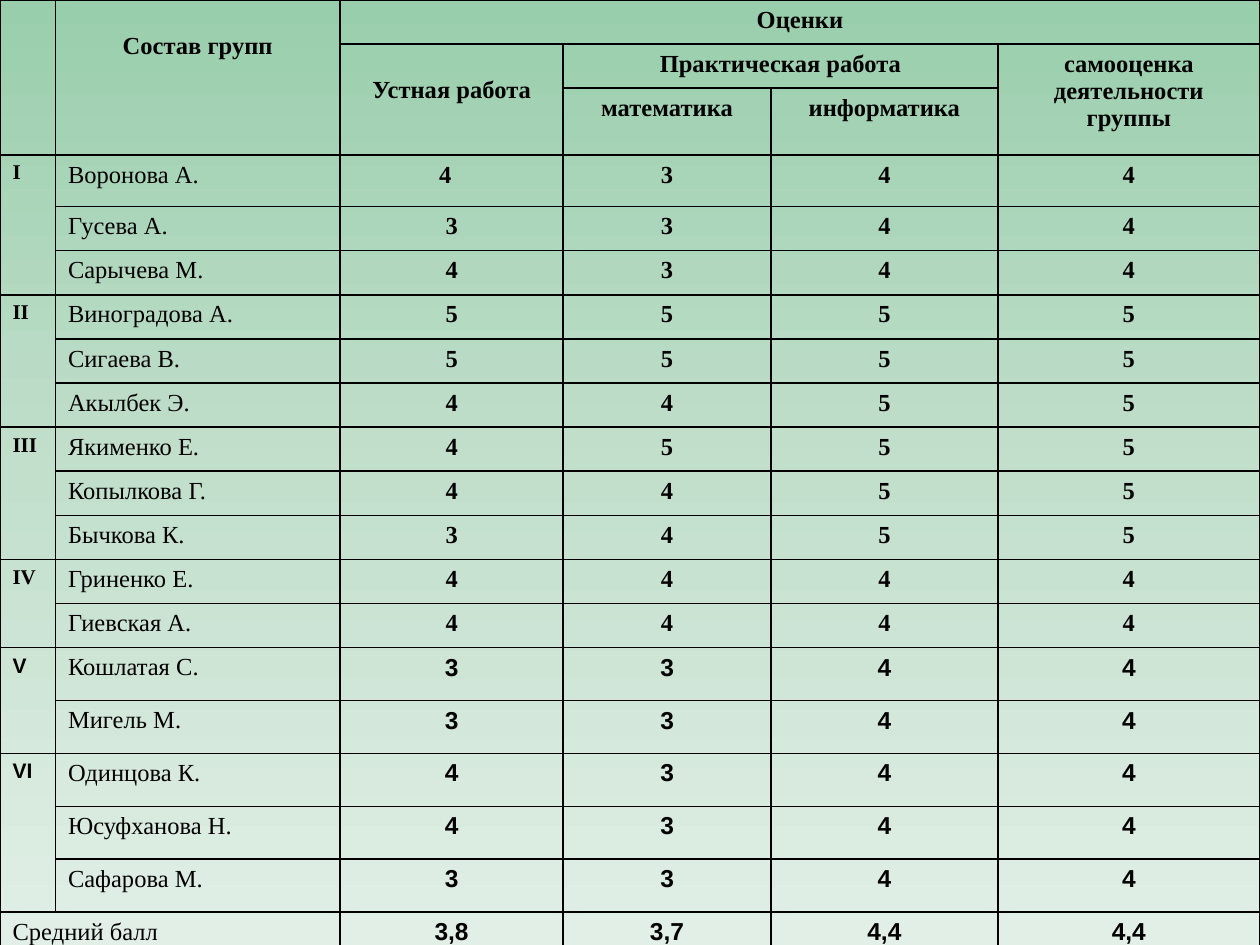
from copy import deepcopy

from pptx import Presentation
from pptx.dml.color import RGBColor
from pptx.enum.text import PP_ALIGN as Align
from pptx.oxml import parse_xml
from pptx.oxml.ns import nsdecls
from pptx.util import Inches, Pt

COLORS = {"top": "99CEAC", "middle": "C2DFCC", "bottom": "E1EFE6", "ink": "000000"}
SERIF, SANS = "Times New Roman", "Arial"

COL_WIDTHS = [0.44, 2.26, 1.77, 1.65, 1.8, 2.08]
ROW_HEIGHTS = [0.35, 0.35, 0.53, 0.41] + [0.35] * 10 + [0.42] * 5 + [0.35]
FIRST_ROW = 3
LINE = 0.21  # one line of header text, in inches

# Header: row, column, rows spanned, columns spanned, text, lines to drop
HEADERS = [
    (0, 0, 3, 1, "", 0),
    (0, 1, 3, 1, "Состав групп", 1),
    (0, 2, 1, 4, "Оценки", 0),
    (1, 2, 2, 1, "Устная работа", 1),
    (1, 3, 1, 2, "Практическая работа", 0),
    (1, 5, 2, 1, "самооценка\nдеятельности группы", 0),
    (2, 3, 1, 1, "математика", 0),
    (2, 4, 1, 1, "информатика", 0),
]

# Groups: number, font of the marks, members with their marks
GROUPS = [
    ("I", SERIF, [("Воронова А.", "4344"), ("Гусева А.", "3344"), ("Сарычева М.", "4344")]),
    ("II", SERIF, [("Виноградова А.", "5555"), ("Сигаева В.", "5555"), ("Акылбек Э.", "4455")]),
    ("III", SERIF, [("Якименко Е.", "4555"), ("Копылкова Г.", "4455"), ("Бычкова К.", "3455")]),
    ("IV", SERIF, [("Гриненко Е.", "4444"), ("Гиевская А.", "4444")]),
    ("V", SANS, [("Кошлатая С.", "3344"), ("Мигель М.", "3344")]),
    ("VI", SANS, [("Одинцова К.", "4344"), ("Юсуфханова Н.", "4344"), ("Сафарова М.", "3344")]),
]
AVERAGES = ["3,8", "3,7", "4,4", "4,4"]


def rgb(name):
    return RGBColor.from_string(COLORS[name])


def set_background(s):
    fill = s.background.fill
    fill.gradient()
    fill.gradient_angle = 270
    first = fill.gradient_stops[0]._gs
    first.addnext(deepcopy(first))
    for stop, name, position in zip(fill.gradient_stops, ("top", "middle", "bottom"), (0, 0.5, 1)):
        stop.color.rgb = rgb(name)
        stop.position = position


def style_cell(cell):
    tc_pr = cell._tc.get_or_add_tcPr()
    for side in ("lnL", "lnR", "lnT", "lnB"):
        tc_pr.append(parse_xml(
            f'<a:{side} {nsdecls("a")} w="{Pt(1)}"><a:solidFill>'
            f'<a:srgbClr val="{COLORS["ink"]}"/></a:solidFill></a:{side}>'))
    cell.fill.background()


def write(cell, text, font=SERIF, size=14, bold=True, align=Align.CENTER):
    cell.text_frame.text = text
    for p in cell.text_frame.paragraphs:
        p.alignment = align
        for r in p.runs:
            r.font.name, r.font.size, r.font.bold = font, Pt(size), bold
            r.font.color.rgb = rgb("ink")


def merge(table, row, col, rows, cols):
    cell = table.cell(row, col)
    if rows * cols > 1:
        cell.merge(table.cell(row + rows - 1, col + cols - 1))
    return cell


def add_grid(s):
    table = s.shapes.add_table(len(ROW_HEIGHTS), len(COL_WIDTHS), 0, 0,
                               Inches(10), Inches(7.5)).table
    table.first_row = table.horz_banding = False
    for column, width in zip(table.columns, COL_WIDTHS):
        column.width = Inches(width)
    for row, height in zip(table.rows, ROW_HEIGHTS):
        row.height = Inches(height)
    for cell in table.iter_cells():
        style_cell(cell)
    return table


def fill_header(table):
    for row, col, rows, cols, text, drop in HEADERS:
        cell = merge(table, row, col, rows, cols)
        cell.margin_top = Inches(0.05 + drop * LINE)
        write(cell, text)


def fill_marks(table, row, marks, font):
    for col, mark in enumerate(marks, start=2):
        write(table.cell(row, col), mark, font)


def fill_groups(table):
    row = FIRST_ROW
    for number, font, members in GROUPS:
        write(merge(table, row, 0, len(members), 1), number, font, 12, align=Align.LEFT)
        for name, marks in members:
            write(table.cell(row, 1), name, bold=False, align=Align.LEFT)
            fill_marks(table, row, marks, font)
            row += 1
    # The first mark sits slightly left of centre
    table.cell(FIRST_ROW, 2).margin_right = Inches(0.2)


def fill_averages(table):
    row = len(ROW_HEIGHTS) - 1
    write(merge(table, row, 0, 1, 2), "Средний балл", bold=False, align=Align.LEFT)
    fill_marks(table, row, AVERAGES, SANS)


def main():
    prs = Presentation()
    prs.slide_width, prs.slide_height = Inches(10), Inches(7.5)
    s = prs.slides.add_slide(prs.slide_layouts[6])
    set_background(s)

    # Table of marks
    table = add_grid(s)
    fill_header(table)
    fill_groups(table)
    fill_averages(table)
    prs.save("out.pptx")


if __name__ == "__main__":
    main()
